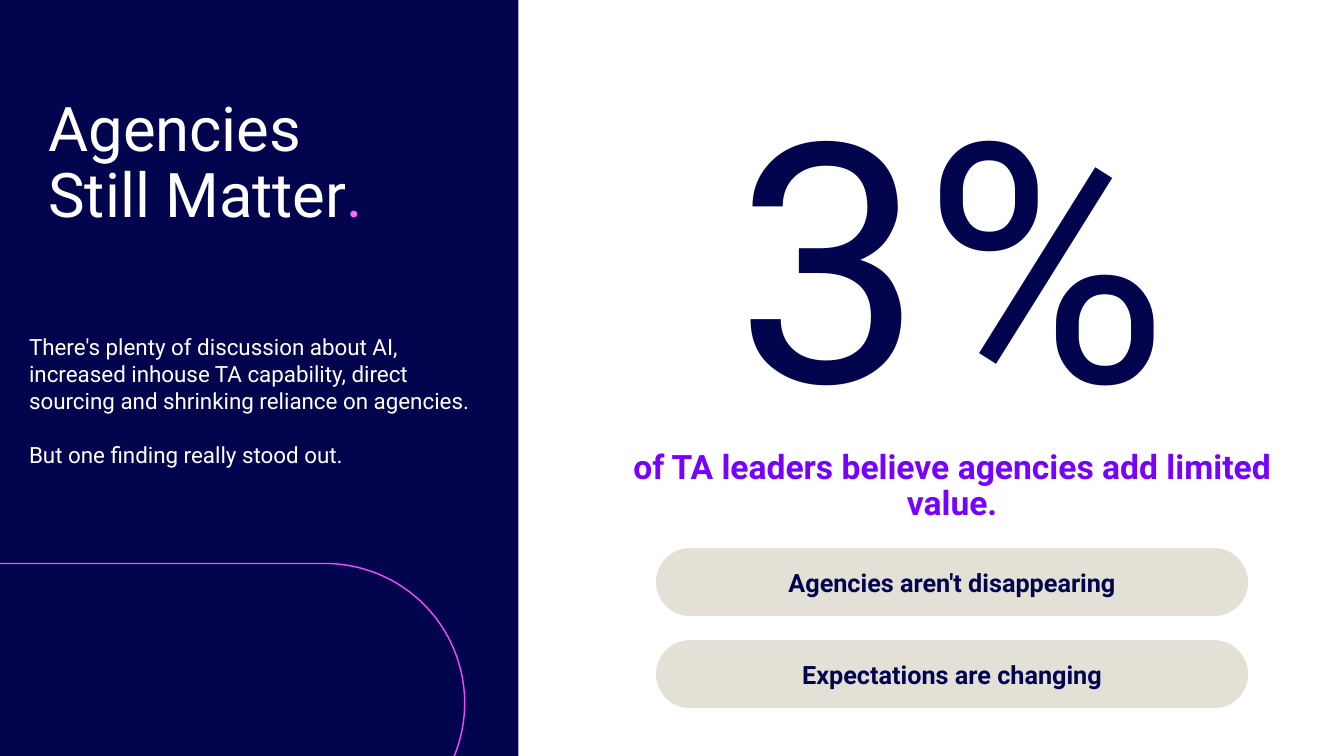
from dataclasses import dataclass

from lxml import etree
from pptx import Presentation
from pptx.dml.color import RGBColor
from pptx.enum.shapes import MSO_SHAPE
from pptx.enum.text import MSO_ANCHOR, MSO_AUTO_SIZE, PP_ALIGN
from pptx.oxml.ns import qn
from pptx.util import Inches, Pt

RECTANGLE, PILL = MSO_SHAPE.RECTANGLE, MSO_SHAPE.ROUNDED_RECTANGLE
LEFT, CENTER = PP_ALIGN.LEFT, PP_ALIGN.CENTER
TOP, MIDDLE = MSO_ANCHOR.TOP, MSO_ANCHOR.MIDDLE
FIXED = MSO_AUTO_SIZE.NONE
TITLE_AND_CONTENT = 1
COLUMNS, ROWS = 160, 90


@dataclass(frozen=True)
class Theme:
    font: str = "Roboto"
    navy: str = "02044E"
    white: str = "FFFFFF"
    violet: str = "7800FF"
    sand: str = "E3E1D6"
    pink: str = "FF67FC"
    outline: str = "F949FF"
    title: int = 44
    figure: int = 239
    claim: int = 24
    label: int = 18
    text: int = 16


class Page:
    """One slide, measured in columns and rows of an even grid."""

    def __init__(self, deck, theme):
        self.theme = theme
        self.slide = deck.slides.add_slide(deck.slide_layouts[TITLE_AND_CONTENT])
        self.column = deck.slide_width / COLUMNS
        self.row = deck.slide_height / ROWS

    def place(self, area):
        left, top, width, height = area
        return [round(n) for n in (left * self.column, top * self.row,
                                   width * self.column, height * self.row)]

    def fill_text(self, box, texts, size, color, bold=False, align=LEFT,
                  anchor=TOP, spacing=1.0, gap=0):
        frame = box.text_frame
        frame.word_wrap = True
        frame.auto_size = FIXED
        frame.vertical_anchor = anchor
        for number, text in enumerate(texts):
            para = frame.add_paragraph() if number else frame.paragraphs[0]
            para.add_run().text = text
            para.alignment = align
            para.line_spacing = spacing
            para.space_before = Pt(gap if number else 0)
            font = para.font
            font.name, font.size, font.bold = self.theme.font, Pt(size), bold
            font.color.rgb = RGBColor.from_string(color)
        return frame

    def shape(self, kind, area, fill=None, line=None):
        box = self.slide.shapes.add_shape(kind, *self.place(area))
        box.shadow.inherit = False
        if kind == PILL:
            box.adjustments[0] = 0.5
        if fill:
            box.fill.solid()
            box.fill.fore_color.rgb = RGBColor.from_string(fill)
        else:
            box.fill.background()
        if line:
            box.line.color.rgb = RGBColor.from_string(line)
            box.line.width = Pt(1)
        else:
            box.line.fill.background()
        return box

    def panel(self, area):
        """Add the dark side panel behind the placeholders."""
        box = self.shape(RECTANGLE, area, self.theme.navy)
        self.slide.shapes._spTree.insert(2, box._element)

    def title(self, area, text, accent):
        box = self.slide.shapes.title
        box.left, box.top, box.width, box.height = self.place(area)
        frame = self.fill_text(box, [text], self.theme.title, self.theme.white,
                               anchor=MIDDLE, spacing=0.9)
        span = frame.paragraphs[0].add_run()
        span.text = accent
        span.font.color.rgb = RGBColor.from_string(self.theme.pink)

    def claim(self, area, text):
        box = self.slide.placeholders[1]
        box.left, box.top, box.width, box.height = self.place(area)
        properties = box.text_frame.paragraphs[0]._p.get_or_add_pPr()
        properties.set("marL", "0")
        properties.set("indent", "0")
        etree.SubElement(properties, qn("a:buNone"))
        frame = self.fill_text(box, [text], self.theme.claim, self.theme.violet,
                               bold=True, align=CENTER, spacing=0.9)
        frame.margin_top = Inches(0.6)

    def text(self, area, texts, size, color, **style):
        box = self.slide.shapes.add_textbox(*self.place(area))
        self.fill_text(box, texts, size, color, **style)

    def pill(self, area, label):
        box = self.shape(PILL, area, self.theme.sand, self.theme.white)
        self.fill_text(box, [label], self.theme.label, self.theme.navy,
                       bold=True, align=CENTER, anchor=MIDDLE)


def main():
    deck = Presentation()
    deck.slide_width, deck.slide_height = Inches(13.33), Inches(7.5)
    theme = Theme()
    page = Page(deck, theme)

    page.panel((0, 0, 61.7, ROWS))
    page.title((4.56, 3.48, 45.24, 32.16), "Agencies Still Matter", ".")
    page.claim((73.32, 46.44, 80.04, 37.08),
               "of TA leaders believe agencies add limited value.")
    page.text((2.28, 39.12, 57.12, 17.4),
              ["There's plenty of discussion about AI, increased inhouse TA "
               "capability, direct sourcing and shrinking reliance on agencies.",
               "But one finding really stood out."],
              theme.text, theme.white, gap=19)
    page.text((73.32, 5.16, 80.04, 49.44), ["3%"], theme.figure, theme.navy,
              align=CENTER)
    for number, label in enumerate(["Agencies aren't disappearing",
                                    "Expectations are changing"]):
        page.pill((78, 65.16 + 10.95 * number, 70.68, 8.28), label)
    page.shape(PILL, (-18.36, 67.08, 73.68, 33.24), line=theme.outline)

    deck.save("out.pptx")


if __name__ == "__main__":
    main()
